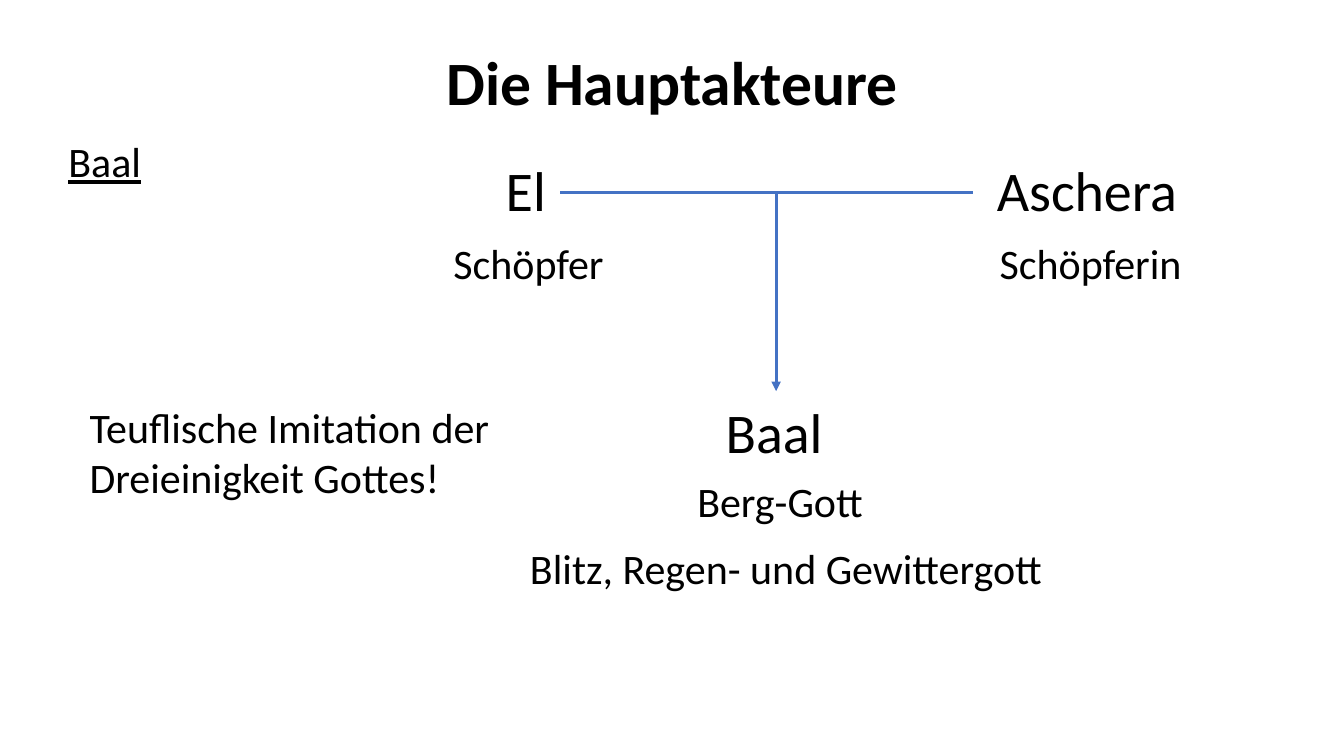
"""Build the slide on the main figures: El, Aschera and Baal."""
from dataclasses import dataclass

from lxml.etree import SubElement
from pptx import Presentation
from pptx.dml.color import RGBColor
from pptx.enum.shapes import MSO_CONNECTOR as Connector
from pptx.enum.text import MSO_ANCHOR as Anchor, MSO_AUTO_SIZE as AutoSize, PP_ALIGN as Align
from pptx.oxml.ns import qn
from pptx.util import Pt


@dataclass(frozen=True)
class Theme:
    font: str = "Calibri"
    ink: RGBColor = RGBColor(0, 0, 0)
    accent: RGBColor = RGBColor(0x44, 0x72, 0xC4)
    title: int = 44
    name: int = 40
    body: int = 30
    line: float = 2.25


THEME = Theme()
TITLE = ("Die Hauptakteure", (66.2, 28.8, 828, 64))
TOPIC = ("Baal", (41.8, 93.6, 369.4, 44))
REMARK = ("Teuflische Imitation der Dreieinigkeit Gottes!", (56.9, 283, 312.5, 80))
PARENT_TOP, ROLE_TOP = 113, 166.3
NAMES = [
    ("El", (354.2, PARENT_TOP, 50.4, 51)),
    ("Aschera", (704.9, PARENT_TOP, 149.8, 51)),
    ("Baal", (511.2, 285.8, 85.7, 51)),
]
ROLES = [
    ("Schöpfer", (316.8, ROLE_TOP, 123.8, 44)),
    ("Schöpferin", (707, ROLE_TOP, 146.2, 44)),
    ("Berg-Gott", (491, 336.2, 139.7, 44)),
    ("Blitz, Regen- und Gewittergott", (371.5, 383.8, 385.9, 44)),
]
UNION_Y, UNION_LEFT, UNION_RIGHT = 137.5, 400.3, 694.8
DESCENT_X, DESCENT_END = 554.4, 279.4


def write(shape, text, size=THEME.body, bold=None, underline=None,
          align=Align.LEFT, spacing=None, before=None):
    frame = shape.text_frame
    frame.word_wrap = True
    paragraph = frame.paragraphs[0]
    paragraph.alignment = align
    if spacing is not None:
        paragraph.line_spacing = spacing
    if before is not None:
        paragraph.space_before = Pt(before)
    run = paragraph.add_run()
    run.text = text
    font = run.font
    font.name, font.size, font.bold, font.underline = THEME.font, Pt(size), bold, underline
    font.color.rgb = THEME.ink


def add_label(slide, text, box, **style):
    shape = slide.shapes.add_textbox(*map(Pt, box))
    write(shape, text, **style)
    shape.text_frame.auto_size = AutoSize.SHAPE_TO_FIT_TEXT


def add_line(slide, start, end, arrow=False):
    connector = slide.shapes.add_connector(Connector.STRAIGHT, *map(Pt, start + end))
    connector.line.color.rgb = THEME.accent
    connector.line.width = Pt(THEME.line)
    if arrow:
        SubElement(connector.line._get_or_add_ln(), qn("a:tailEnd"), type="triangle")
    SubElement(connector._element.spPr, qn("a:effectLst"))


def add_title(slide, text, box):
    title = slide.shapes.title
    title.left, title.top, title.width, title.height = map(Pt, box)
    write(title, text, size=THEME.title, bold=True, align=Align.CENTER, spacing=0.9)
    title.text_frame.vertical_anchor = Anchor.MIDDLE


def main():
    presentation = Presentation()
    presentation.slide_width, presentation.slide_height = Pt(960), Pt(540)
    slide = presentation.slides.add_slide(presentation.slide_layouts.get_by_name("Title Only"))
    add_title(slide, *TITLE)
    add_label(slide, *REMARK)
    add_label(slide, *TOPIC, underline=True)
    for name in NAMES:
        add_label(slide, *name, size=THEME.name, spacing=0.9, before=10)
    add_line(slide, (DESCENT_X, UNION_Y), (DESCENT_X, DESCENT_END), arrow=True)
    add_line(slide, (UNION_LEFT, UNION_Y), (UNION_RIGHT, UNION_Y))
    for role in ROLES:
        add_label(slide, *role)
    presentation.save("out.pptx")


if __name__ == "__main__":
    main()
